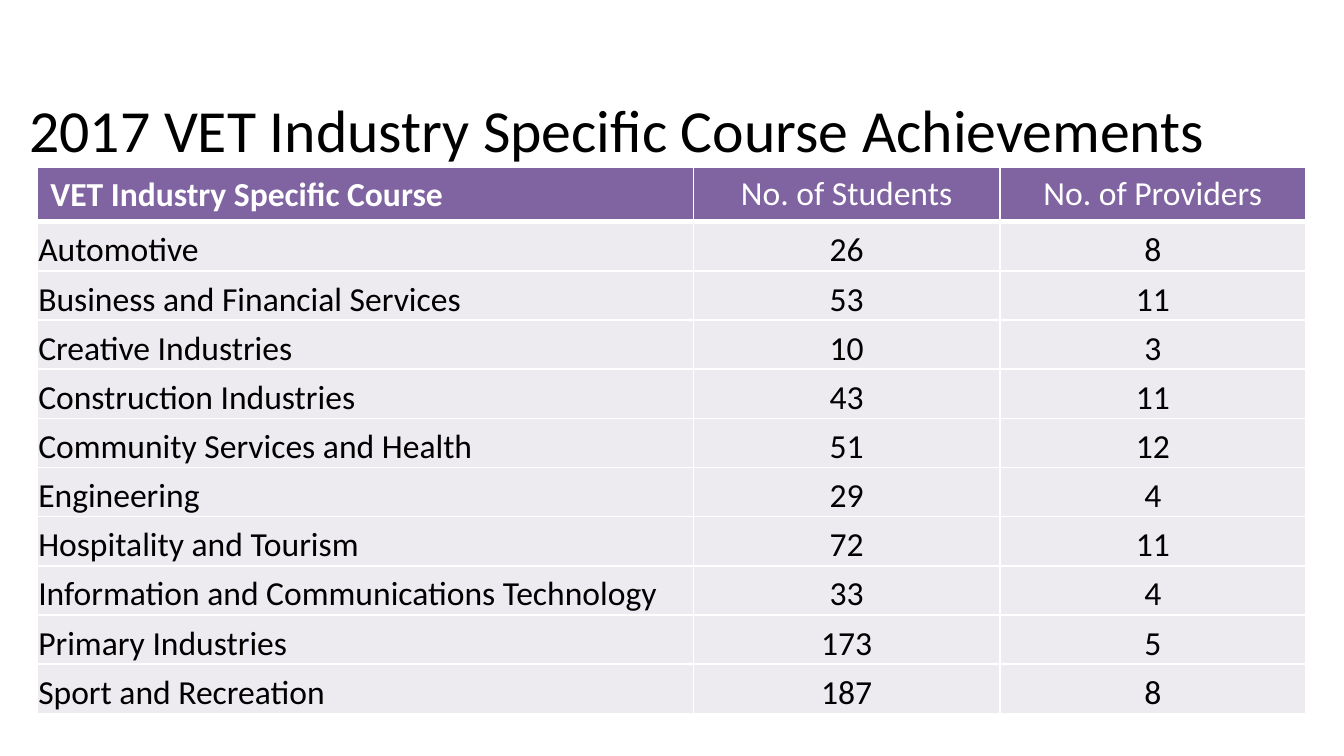
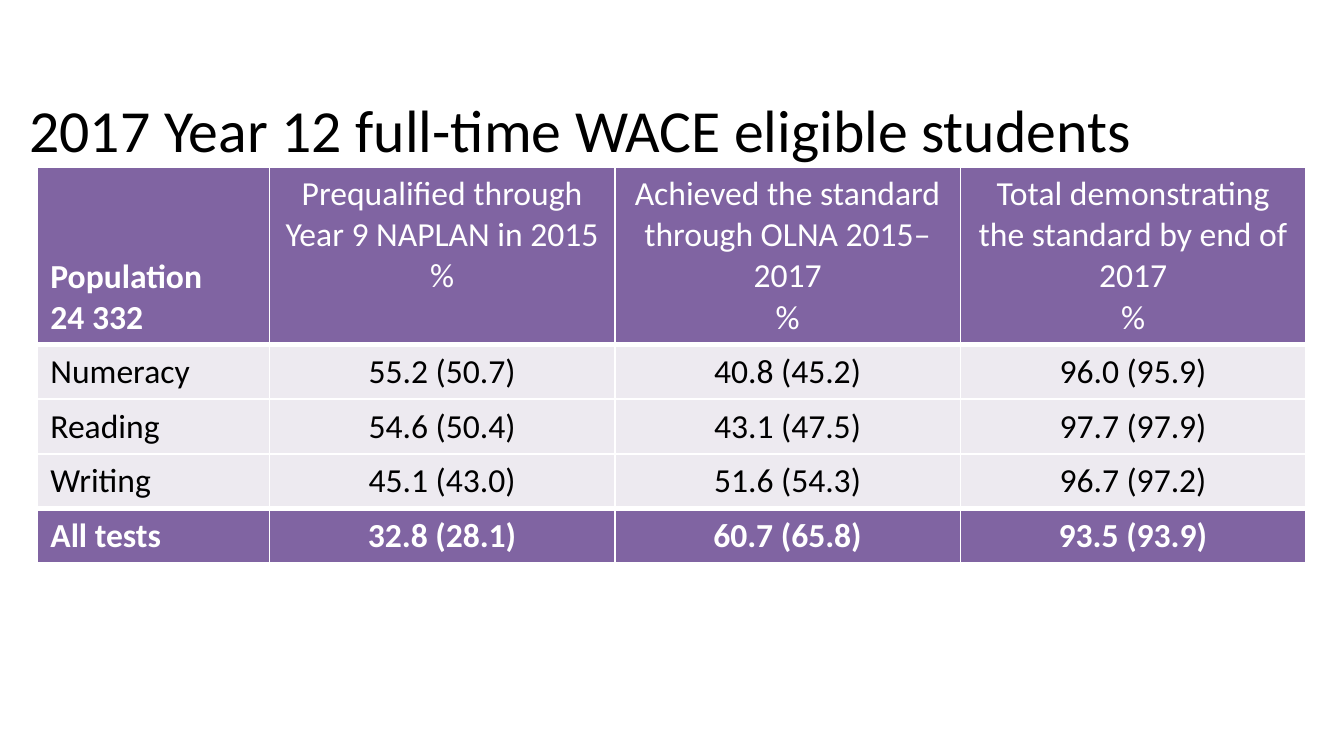
from lxml.etree import SubElement
from pptx import Presentation
from pptx.dml.color import RGBColor
from pptx.enum.text import MSO_ANCHOR, MSO_AUTO_SIZE, PP_ALIGN
from pptx.oxml.ns import qn
from pptx.util import Pt

PURPLE = RGBColor(0x80, 0x64, 0xA2)
PALE = RGBColor(0xED, 0xEA, 0xF0)
WHITE = RGBColor(0xFF, 0xFF, 0xFF)
BLACK = RGBColor(0, 0, 0)
FONT = "Calibri"


class Deck:
    def __init__(self):
        self.prs = Presentation()
        self.prs.slide_width, self.prs.slide_height = Pt(720), Pt(405)
        self.slide = None

    def style(self, para, size, color, bold=False, align=PP_ALIGN.LEFT):
        para.alignment = align
        for run in para.runs:
            font = run.font
            font.name, font.size, font.bold = FONT, Pt(size), bold
            font.color.rgb = color

    def title(self, text):
        """Start a slide with its title."""
        self.slide = self.prs.slides.add_slide(self.prs.slide_layouts[5])
        box = self.slide.shapes.title
        box.left, box.top, box.width, box.height = Pt(8.6), Pt(48), Pt(703), Pt(42)
        frame = box.text_frame
        frame.text = text
        frame.word_wrap = True
        frame.auto_size = MSO_AUTO_SIZE.NONE
        frame.vertical_anchor = MSO_ANCHOR.MIDDLE
        self.style(frame.paragraphs[0], 32, BLACK)

    def border(self, cell, top, bottom):
        props = cell._tc.get_or_add_tcPr()
        for side, width in (("L", 1), ("R", 1), ("T", top), ("B", bottom)):
            line = SubElement(props, qn(f"a:ln{side}"), w=str(Pt(width)))
            fill = SubElement(line, qn("a:solidFill"))
            SubElement(fill, qn("a:srgbClr"), val=str(WHITE))

    def cell(self, cell, text, dark, bold, center, top, bottom):
        self.border(cell, top, bottom)
        cell.fill.solid()
        cell.fill.fore_color.rgb = PURPLE if dark else PALE
        para = cell.text_frame.paragraphs[0]
        para.text = text
        self.style(para, 18, WHITE if dark else BLACK, bold,
                   PP_ALIGN.CENTER if center else PP_ALIGN.LEFT)

    def table(self, rows, widths, pitch, height, total=False, tight=False):
        """Purple head row, pale body, and a purple total row if asked."""
        last = len(rows) - 1
        frame = self.slide.shapes.add_table(
            len(rows), len(widths), Pt(19.8), Pt(89.6), Pt(sum(widths)), Pt(height))
        table = frame.table
        table.first_row = table.horz_banding = False
        for col, width in zip(table.columns, widths):
            col.width = Pt(width)
        # Rows with thick rules below the head and above the total
        thick = {1, last} if total else {1}
        for r, row in enumerate(rows):
            table.rows[r].height = Pt(pitch)
            sums = total and r == last
            for c, text in enumerate(row):
                cell = table.cell(r, c)
                self.cell(cell, text, r == 0 or sums, sums or r == c == 0, c > 0,
                          3 if r in thick else 1, 3 if r + 1 in thick else 1)
                if r == c == 0 or (tight and r):
                    cell.vertical_anchor = MSO_ANCHOR.BOTTOM
                if tight and r:
                    cell.margin_left = cell.margin_right = cell.margin_top = Pt(0.7)
                    cell.margin_bottom = Pt(0)
        frame.height = Pt(height)


def main():
    deck = Deck()

    # Course achievements
    deck.title("2017 VET Industry Specific Course Achievements")
    deck.table([
        ("VET Industry Specific Course", "No. of Students", "No. of Providers"),
        ("Automotive", "26", "8"),
        ("Business and Financial Services", "53", "11"),
        ("Creative Industries", "10", "3"),
        ("Construction Industries", "43", "11"),
        ("Community Services and Health", "51", "12"),
        ("Engineering", "29", "4"),
        ("Hospitality and Tourism", "72", "11"),
        ("Information and Communications Technology", "33", "4"),
        ("Primary Industries", "173", "5"),
        ("Sport and Recreation", "187", "8"),
    ], (351.8, 164, 164), 26.35, 291.6, tight=True)

    # Literacy and numeracy standard
    deck.title("2017 Year 12 full-time WACE eligible students")
    deck.table([
        ("Population\v24 332",
         "Prequalified through Year 9 NAPLAN in 2015\v%",
         "Achieved the standard through OLNA 2015–2017\v%",
         "Total demonstrating the standard by end of 2017\v%"),
        ("Numeracy", "55.2 (50.7)", "40.8 (45.2)", "96.0 (95.9)"),
        ("Reading", "54.6 (50.4)", "43.1 (47.5)", "97.7 (97.9)"),
        ("Writing", "45.1 (43.0)", "51.6 (54.3)", "96.7 (97.2)"),
        ("All tests", "32.8 (28.1)", "60.7 (65.8)", "93.5 (93.9)"),
    ], (124.5, 185.1, 185.1, 185.1), 29.2, 210.2, total=True)

    deck.prs.save("out.pptx")


if __name__ == "__main__":
    main()
